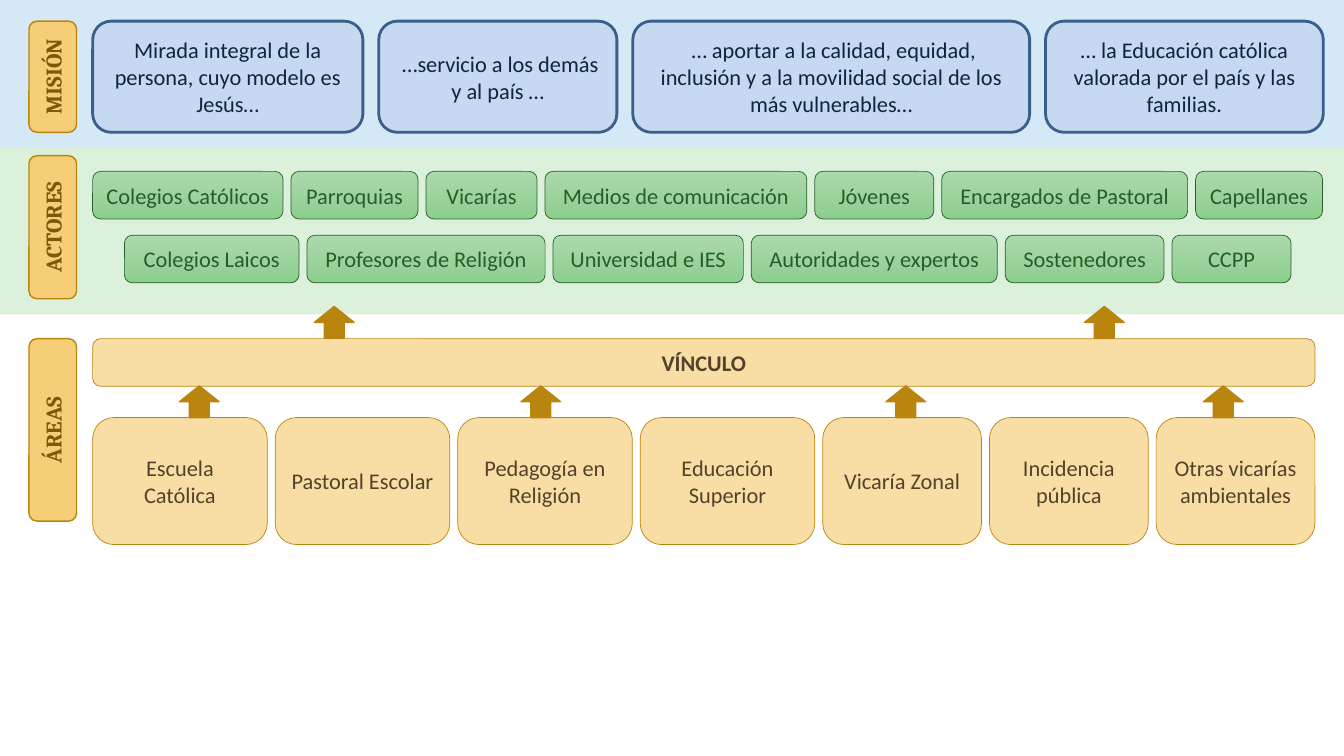
from pptx import Presentation
from pptx.dml.color import RGBColor as RGB
from pptx.enum.shapes import MSO_SHAPE as Geo
from pptx.enum.text import MSO_ANCHOR as Anchor, PP_ALIGN as Align
from pptx.util import Pt

BANDS = [(-2.2, 962, 108, "D5E8F5"), (105.8, 960, 118.8, "DCF1DC")]
TABS = [("MISIÓN", 15.1, 79.4), ("ACTORES", 111.2, 102.2), ("ÁREAS", 241.9, 130.3)]
MISSION = [
    ("Mirada integral de la persona, cuyo modelo es Jesús…", 193),
    (" …servicio a los demás y al país …", 170.1),
    (" … aportar a la calidad, equidad, inclusión y a la movilidad social "
     "de los más vulnerables…", 283.5),
    ("… la Educación católica valorada por el país y las familias.", 198.4),
]
ACTORS = [
    ("Colegios Católicos", 136), ("Parroquias", 90.7), ("Vicarías", 79.4),
    ("Medios de comunicación", 187), ("Jóvenes", 85),
    ("Encargados de Pastoral", 175.7), ("Capellanes", 90.7),
]
ALLIES = [
    ("Colegios Laicos", 124.7), ("Profesores de Religión", 170.1),
    ("Universidad e IES", 136), ("Autoridades y expertos", 175.7),
    ("Sostenedores", 113.4), ("CCPP", 85),
]
AREAS = [
    ("Escuela Católica", 124.7), ("Pastoral Escolar", 124.7),
    ("Pedagogía en Religión", 124.7), ("Educación Superior", 124.7),
    ("Vicaría Zonal", 113.4), ("Incidencia pública", 113.4),
    ("Otras vicarías ambientales", 113.4),
]
LINK = [("VÍNCULO", 873.1)]
ARROWS = [(275.6, [128.2, 372.2, 632.9, 859.7]), (218.9, [224.6, 774.7])]

LEFT, GAP, BAR = 66.2, 5.67, 34
GOLD = "BA850E"
BLUE = (["C6D9F1"], "3A5F8C", 2, "0F243E")
GREEN = (["ACD9AC", "8DCE8E"], "265E27", 0.5, "265E27")
SAND = (["F8DEA5"], GOLD, 0.5, "53422A")
AMBER = (["F5CE77"], GOLD, 1, "7C5809")

deck = Presentation()
deck.slide_width, deck.slide_height = Pt(960), Pt(540)
slide = deck.slides.add_slide(deck.slide_layouts[6])


def paint(color, value):
    color.rgb = RGB.from_string(value)


def draw(geo, x, y, w, h, fills, edge=None, thick=0):
    shape = slide.shapes.add_shape(geo, Pt(x), Pt(y), Pt(w), Pt(h))
    shape.shadow.inherit = False
    if len(fills) > 1:
        shape.fill.gradient()
        shape.fill.gradient_angle = 270
        for stop, value in zip(shape.fill.gradient_stops, fills):
            paint(stop.color, value)
    else:
        shape.fill.solid()
        paint(shape.fill.fore_color, fills[0])
    if edge:
        paint(shape.line.color, edge)
        shape.line.width = Pt(thick)
    else:
        shape.line.fill.background()
    return shape


def label(text, x, y, w, h, style, font="Calibri", bold=False):
    fills, edge, thick, ink = style
    shape = draw(Geo.ROUNDED_RECTANGLE, x, y, w, h, fills, edge, thick)
    frame = shape.text_frame
    frame.word_wrap = True
    frame.vertical_anchor = Anchor.MIDDLE
    para = frame.paragraphs[0]
    para.alignment = Align.CENTER
    run = para.add_run()
    run.text = text
    run.font.name, run.font.size, run.font.bold = font, Pt(16), bold
    paint(run.font.color, ink)
    return shape


def row(items, x, y, h, style, gap=GAP, bold=False):
    for text, w in items:
        label(text, x, y, w, h, style, bold=bold)
        x += w + gap


for y, w, h, fill in BANDS:
    draw(Geo.RECTANGLE, 0, y, w, h, [fill])

for text, y, h in TABS:
    mid = y + h / 2
    tab = label(text, 37.7 - h / 2, mid - BAR / 2, h, BAR, AMBER, "Cambria", True)
    tab.rotation = 270

row(MISSION, LEFT, 15.1, 79.4, BLUE, 2 * GAP)
row(ACTORS, LEFT, 122.4, BAR, GREEN)
row(ALLIES, LEFT + 4 * GAP, 168, BAR, GREEN)
row(LINK, LEFT, 241.9, BAR, SAND, bold=True)
row(AREAS, LEFT, 298.3, 90.7, SAND)

for y, spots in ARROWS:
    for x in spots:
        draw(Geo.UP_ARROW, x, y, 28.3, 22.7, [GOLD], GOLD, 1)

deck.save("out.pptx")
